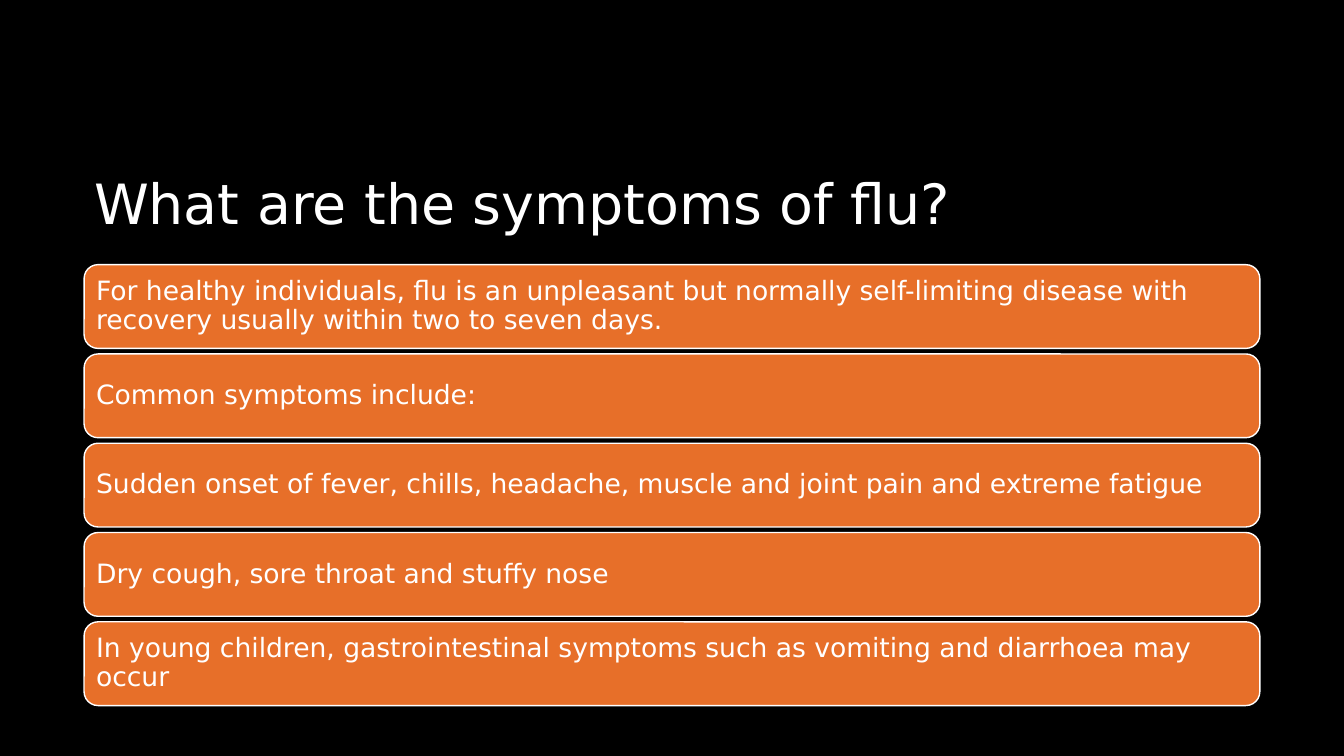
from pptx import Presentation
from pptx.dml.color import RGBColor
from pptx.enum.shapes import MSO_SHAPE
from pptx.enum.text import MSO_ANCHOR, MSO_AUTO_SIZE, PP_ALIGN
from pptx.util import Cm, Pt

ROUNDED = MSO_SHAPE.ROUNDED_RECTANGLE
TOP, MIDDLE = MSO_ANCHOR.TOP, MSO_ANCHOR.MIDDLE
LEFT = PP_ALIGN.LEFT
NO_AUTOFIT = MSO_AUTO_SIZE.NONE

BLACK = RGBColor(0x00, 0x00, 0x00)
WHITE = RGBColor(0xFF, 0xFF, 0xFF)
ORANGE = RGBColor(0xE7, 0x6F, 0x29)

MARGIN = 2.12
BAR_TOP, BAR_WIDTH, BAR_HEIGHT, BAR_PITCH = 6.67, 29.63, 2.11, 2.25

SYMPTOMS = [
    "For healthy individuals, flu is an unpleasant but normally self-limiting "
    "disease with recovery usually within two to seven days.",
    "Common symptoms include:",
    "Sudden onset of fever, chills, headache, muscle and joint pain and extreme fatigue",
    "Dry cough, sore throat and stuffy nose",
    "In young children, gastrointestinal symptoms such as vomiting and diarrhoea may occur",
]


class FluSlide:
    """Hold the text style and the slide, and add its title and bars."""

    font_name = "DejaVu Sans"
    line_spacing = 0.9

    def __init__(self, deck):
        self.slide = deck.slides.add_slide(deck.slide_layouts[5])
        background = self.slide.background.fill
        background.solid()
        background.fore_color.rgb = BLACK

    def set_text(self, frame, wording, size, anchor, inset):
        frame.word_wrap = True
        frame.auto_size = NO_AUTOFIT
        frame.vertical_anchor = anchor
        frame.margin_left = frame.margin_right = Cm(inset)
        frame.margin_top = frame.margin_bottom = Cm(0.2)
        paragraph = frame.paragraphs[0]
        paragraph.alignment = LEFT
        paragraph.line_spacing = self.line_spacing
        paragraph.space_before = Pt(0)
        run = paragraph.add_run()
        run.text = wording
        run.font.name = self.font_name
        run.font.size = Pt(size)
        run.font.color.rgb = WHITE

    def title(self, wording):
        heading = self.slide.shapes.title
        heading.left, heading.top = Cm(MARGIN), Cm(4.24)
        heading.width, heading.height = Cm(25.4), Cm(2.21)
        self.set_text(heading.text_frame, wording, 39.6, TOP, 0.25)

    def bar(self, top, wording):
        bar = self.slide.shapes.add_shape(
            ROUNDED, Cm(MARGIN), Cm(top), Cm(BAR_WIDTH), Cm(BAR_HEIGHT))
        bar.shadow.inherit = False
        bar.fill.solid()
        bar.fill.fore_color.rgb = ORANGE
        bar.line.color.rgb = WHITE
        bar.line.width = Pt(1)
        self.set_text(bar.text_frame, wording, 19, MIDDLE, 0.2)


def main():
    deck = Presentation()
    deck.slide_width, deck.slide_height = Cm(33.87), Cm(19.05)
    flu = FluSlide(deck)
    flu.title("What are the symptoms of flu?")
    for row, symptom in enumerate(SYMPTOMS):
        flu.bar(BAR_TOP + row * BAR_PITCH, symptom)
    deck.save("out.pptx")


if __name__ == "__main__":
    main()
